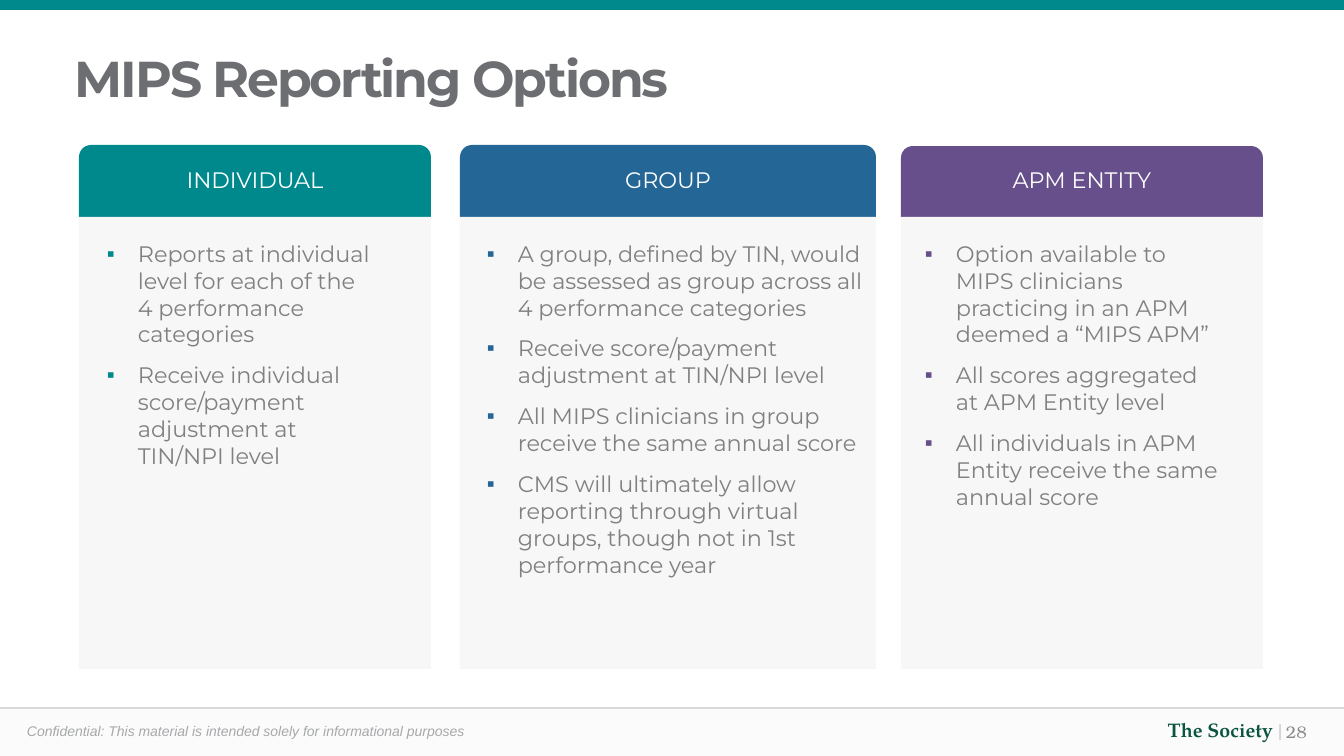
import pptx
import pptx.dml.color
import pptx.enum.shapes
import pptx.enum.text
import pptx.oxml
import pptx.oxml.ns
import pptx.util
from dataclasses import dataclass
from typing import Any, NamedTuple

SCALE = 914400 / 100.8
WIDE, HIGH = 1344, 756
KIND = pptx.enum.shapes.MSO_SHAPE
ALIGN = pptx.enum.text.PP_ALIGN
ANCHOR = pptx.enum.text.MSO_ANCHOR


@dataclass(frozen=True)
class Theme:
    teal: str = "00898D"
    blue: str = "246797"
    plum: str = "664F8A"
    green: str = "0A5540"
    white: str = "FFFFFF"
    panel: str = "F7F7F7"
    strip: str = "FBFBFB"
    rule: str = "D9D9D9"
    title: str = "6D6E71"
    body: str = "808080"
    note: str = "A7A8AA"
    bar: str = "AFAFB3"
    page: str = "898989"
    main: str = "Montserrat"
    big: int = 36
    mid: int = 16
    brand: int = 14
    small: int = 12
    tiny: int = 10


THEME = Theme()


class Box(NamedTuple):
    left: int
    top: int
    width: int
    height: int


class Style(NamedTuple):
    face: str
    size: int
    color: str
    bold: bool = False
    slant: bool = False


class Column(NamedTuple):
    head: str
    color: str
    left: int
    width: int
    top: int
    list_box: Box
    points: list[str]


COLUMNS = [
    Column("INDIVIDUAL", THEME.teal, 79, 352, 145, Box(97, 235, 298, 403), [
        "Reports at individual level for each of the\n4 performance categories",
        "Receive individual score/payment adjustment at TIN/NPI level",
    ]),
    Column("GROUP", THEME.blue, 460, 416, 145, Box(477, 235, 399, 401), [
        "A group, defined by TIN, would be assessed as group across all 4 performance categories",
        "Receive score/payment adjustment at TIN/NPI level",
        "All MIPS clinicians in group receive the same annual score",
        "CMS will ultimately allow reporting through virtual groups, though not in 1st performance year",
    ]),
    Column("APM ENTITY", THEME.plum, 901, 362, 146, Box(915, 235, 316, 479), [
        "Option available to MIPS clinicians practicing in an APM deemed a “MIPS APM”",
        "All scores aggregated at APM Entity level",
        "All individuals in APM Entity receive the same annual score",
    ]),
]
SPLIT, FLOOR, FOOT = 217, 669, 708


def px(count: int) -> int:
    return pptx.util.Emu(round(count * SCALE))


def rgb(color: str) -> pptx.dml.color.RGBColor:
    return pptx.dml.color.RGBColor.from_string(color)


def add_block(slide: Any, kind: Any, box: Box, color: str) -> None:
    block = slide.shapes.add_shape(kind, *map(px, box))
    block.shadow.inherit = False
    block.fill.solid()
    block.fill.fore_color.rgb = rgb(color)
    block.line.fill.background()


def add_rule(slide: Any, y: int) -> None:
    rule = slide.shapes.add_connector(
        pptx.enum.shapes.MSO_CONNECTOR.STRAIGHT, 0, px(y), px(WIDE), px(y))
    rule.line.color.rgb = rgb(THEME.rule)
    rule.line.width = pptx.util.Pt(1)
    props = rule._element.spPr
    props.append(pptx.oxml.parse_xml(
        f'<a:effectLst {pptx.oxml.ns.nsdecls("a")}/>'))


def add_text(slide: Any, box: Box, lines: list[str], style: Style,
             align: Any = ALIGN.LEFT) -> Any:
    frame = slide.shapes.add_textbox(*map(px, box)).text_frame
    frame.word_wrap = True
    for i, line in enumerate(lines):
        para = frame.add_paragraph() if i else frame.paragraphs[0]
        para.text = line
        para.alignment = align
        font = para.font
        font.name = style.face
        font.size = pptx.util.Pt(style.size)
        font.color.rgb = rgb(style.color)
        font.bold = style.bold
        font.italic = style.slant
    return frame


def add_bullet(para: Any, color: str) -> None:
    para.space_before = pptx.util.Pt(10)
    props = para._p.get_or_add_pPr()
    props.set("marL", str(px(31)))
    props.set("indent", str(-px(31)))
    space = pptx.oxml.ns.nsdecls("a")
    last = props.find(pptx.oxml.ns.qn("a:defRPr"))
    for xml in (
        f'<a:buClr {space}><a:srgbClr val="{color}"/></a:buClr>',
        f'<a:buFont {space} typeface="Arial"/>',
        f'<a:buChar {space} char="▪"/>',
    ):
        last.addprevious(pptx.oxml.parse_xml(xml))


def add_column(slide: Any, col: Column) -> None:
    add_block(slide, KIND.ROUND_2_SAME_RECTANGLE,
              Box(col.left, col.top, col.width, SPLIT - col.top), col.color)
    add_block(slide, KIND.RECTANGLE,
              Box(col.left, SPLIT, col.width, FLOOR - SPLIT), THEME.panel)
    head = add_text(slide, Box(col.left, 161, col.width, 33), [col.head],
                    Style(THEME.main, THEME.mid, THEME.white), ALIGN.CENTER)
    head.paragraphs[0].space_before = pptx.util.Pt(10)
    frame = add_text(slide, col.list_box, col.points,
                     Style(THEME.main, THEME.mid, THEME.body))
    for para in frame.paragraphs:
        add_bullet(para, col.color)


def add_footer(slide: Any) -> None:
    add_block(slide, KIND.RECTANGLE, Box(0, FOOT, WIDE, HIGH - FOOT), THEME.strip)
    add_rule(slide, FOOT)
    note = add_text(
        slide, Box(27, 723, 865, 17),
        ["Confidential: This material is intended solely for informational purposes"],
        Style("Arial", THEME.tiny, THEME.note, slant=True))
    note.margin_left = note.margin_right = note.margin_top = note.margin_bottom = 0
    brand = add_text(slide, Box(1047, 713, 245, 34), ["The Society "],
                     Style("TeX Gyre Pagella", THEME.brand, THEME.green, bold=True),
                     ALIGN.RIGHT)
    bar = brand.paragraphs[0].add_run()
    bar.text = "|"
    bar.font.bold = False
    bar.font.color.rgb = rgb(THEME.bar)
    page = add_text(slide, Box(1276, 712, 44, 40), ["28"],
                    Style("TeX Gyre Bonum", THEME.small, THEME.page))
    page.vertical_anchor = ANCHOR.MIDDLE


def main() -> None:
    deck = pptx.Presentation()
    deck.slide_width, deck.slide_height = px(WIDE), px(HIGH)
    slide = deck.slides.add_slide(deck.slide_layouts[6])
    add_footer(slide)
    add_block(slide, KIND.RECTANGLE, Box(0, 0, WIDE, 10), THEME.teal)
    title = add_text(slide, Box(65, 42, 1211, 123), ["MIPS Reporting Options"],
                     Style(THEME.main, THEME.big, THEME.title, bold=True))
    title.paragraphs[0].font._element.set("spc", "-150")
    for col in COLUMNS:
        add_column(slide, col)
    deck.save("out.pptx")


if __name__ == "__main__":
    main()
